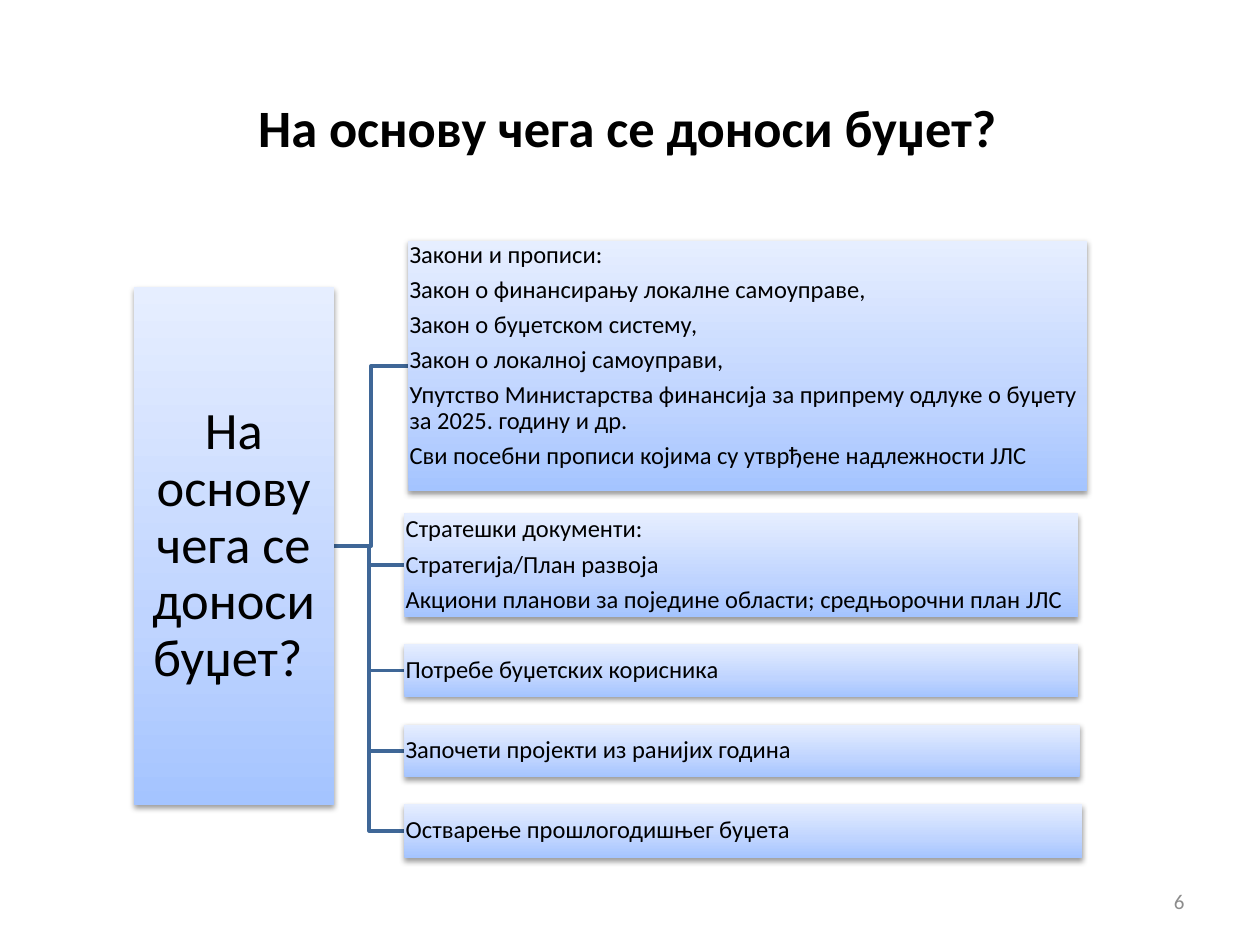
import pptx
import pptx.util
import pptx.oxml
from pptx.dml.color import RGBColor
from pptx.enum.shapes import MSO_SHAPE
from pptx.enum.text import MSO_ANCHOR, PP_ALIGN
from pptx.util import Inches

BLACK = RGBColor(0, 0, 0)
GREY = RGBColor(0x8C, 0x8C, 0x8C)
BLUE = RGBColor(0x3F, 0x67, 0x97)
STOPS = [(0, "A4C4FF"), (35, "BFD4FF"), (100, "E6EEFF")]
FONT = "Calibri"
NS = 'xmlns:a="http://schemas.openxmlformats.org/drawingml/2006/main"'

TITLE = "На основу чега се доноси буџет?"
ROOT = ("На основу чега се доноси буџет? ", (1.06, 2.28, 1.59, 4.11))
# Each branch: paragraphs, then left, top, width, height in inches
BRANCHES = [
    (["Закони и прописи:",
      "Закон о финансирању локалне самоуправе,",
      "Закон о буџетском систему,",
      "Закон о локалној самоуправи,",
      "Упутство Министарства финансија за припрему одлуке о буџету за 2025. годину и др.",
      "Сви посебни прописи којима су утврђене надлежности ЈЛС"],
     (3.24, 1.91, 5.39, 1.99)),
    (["Стратешки документи:",
      "Стратегија/План развоја",
      "Акциони планови за поједине области; средњорочни план ЈЛС"],
     (3.21, 4.07, 5.35, 0.83)),
    (["Потребе буџетских корисника"], (3.21, 5.11, 5.35, 0.42)),
    (["Започети пројекти из ранијих година"], (3.21, 5.75, 5.36, 0.42)),
    (["Остварење прошлогодишњег буџета"], (3.21, 6.38, 5.38, 0.43)),
]


def place(shape, box):
    shape.left, shape.top, shape.width, shape.height = map(Inches, box)


def write(shape, lines, size, color=BLACK, align=PP_ALIGN.LEFT,
          anchor=MSO_ANCHOR.MIDDLE, bold=False):
    frame = shape.text_frame
    frame.text = "\n".join(lines)
    frame.word_wrap = True
    frame.vertical_anchor = anchor
    for para in frame.paragraphs:
        para.alignment = align
        for run in para.runs:
            font = run.font
            font.name, font.size, font.bold = FONT, pptx.util.Pt(size), bold
            font.color.rgb = color


def add_box(slide, box, lines, size, inset, **look):
    """Add a gradient box with a soft shadow below it."""
    shape = slide.shapes.add_shape(MSO_SHAPE.RECTANGLE, *map(Inches, box))
    shape.line.fill.background()
    shape.shadow.inherit = False
    stops = "".join(f'<a:gs pos="{pos * 1000}"><a:srgbClr val="{rgb}"/></a:gs>'
                    for pos, rgb in STOPS)
    shape.line._get_or_add_ln().addprevious(pptx.oxml.parse_xml(
        f'<a:gradFill {NS} rotWithShape="1"><a:gsLst>{stops}</a:gsLst>'
        '<a:lin ang="16200000" scaled="0"/></a:gradFill>'))
    shape._element.spPr.find(pptx.oxml.ns.qn("a:effectLst")).append(
        pptx.oxml.parse_xml(
            f'<a:outerShdw {NS} blurRad="40000" dist="20000" dir="5400000" '
            'rotWithShape="0"><a:srgbClr val="000000"><a:alpha val="38000"/>'
            '</a:srgbClr></a:outerShdw>'))
    write(shape, lines, size, **look)
    frame = shape.text_frame
    frame.margin_left = frame.margin_right = Inches(inset)
    frame.margin_top = frame.margin_bottom = Inches(inset)
    for para in frame.paragraphs:
        para.line_spacing = 0.9
        para.space_after = pptx.util.Pt(size * 0.35)


def add_elbow(slide, start, end):
    """Join two points by a line that turns halfway across."""
    (x1, y1), (x2, y2) = start, end
    mid = (x1 + x2) / 2
    path = [(Inches(x), Inches(y))
            for x, y in [(x1, y1), (mid, y1), (mid, y2), (x2, y2)]]
    build = slide.shapes.build_freeform(*path[0])
    build.add_line_segments(path[1:], close=False)
    line = build.convert_to_shape()
    line.fill.background()
    line.line.color.rgb = BLUE
    line.line.width = pptx.util.Pt(2)
    line.shadow.inherit = False


def main():
    prs = pptx.Presentation()
    prs.slide_width, prs.slide_height = Inches(10), Inches(7.5)
    slide = prs.slides.add_slide(prs.slide_layouts[5])

    title = slide.shapes.title
    place(title, (0.48, 0.54, 9, 0.93))
    write(title, [TITLE], 30, align=PP_ALIGN.CENTER, bold=True)

    number = slide.shapes.add_textbox(*map(Inches, (7.17, 6.95, 2.33, 0.4)))
    write(number, ["6"], 12, GREY, PP_ALIGN.RIGHT)

    text, root = ROOT
    start = (root[0] + root[2], root[1] + root[3] / 2)
    for _, box in reversed(BRANCHES):
        add_elbow(slide, start, (box[0], box[1] + box[3] / 2))

    add_box(slide, root, [text], 30, 0.02, align=PP_ALIGN.CENTER)
    for i, (lines, box) in enumerate(BRANCHES):
        anchor = MSO_ANCHOR.MIDDLE if i else MSO_ANCHOR.TOP
        add_box(slide, box, lines, 14, 0.01, anchor=anchor)

    prs.save("out.pptx")


if __name__ == "__main__":
    main()
